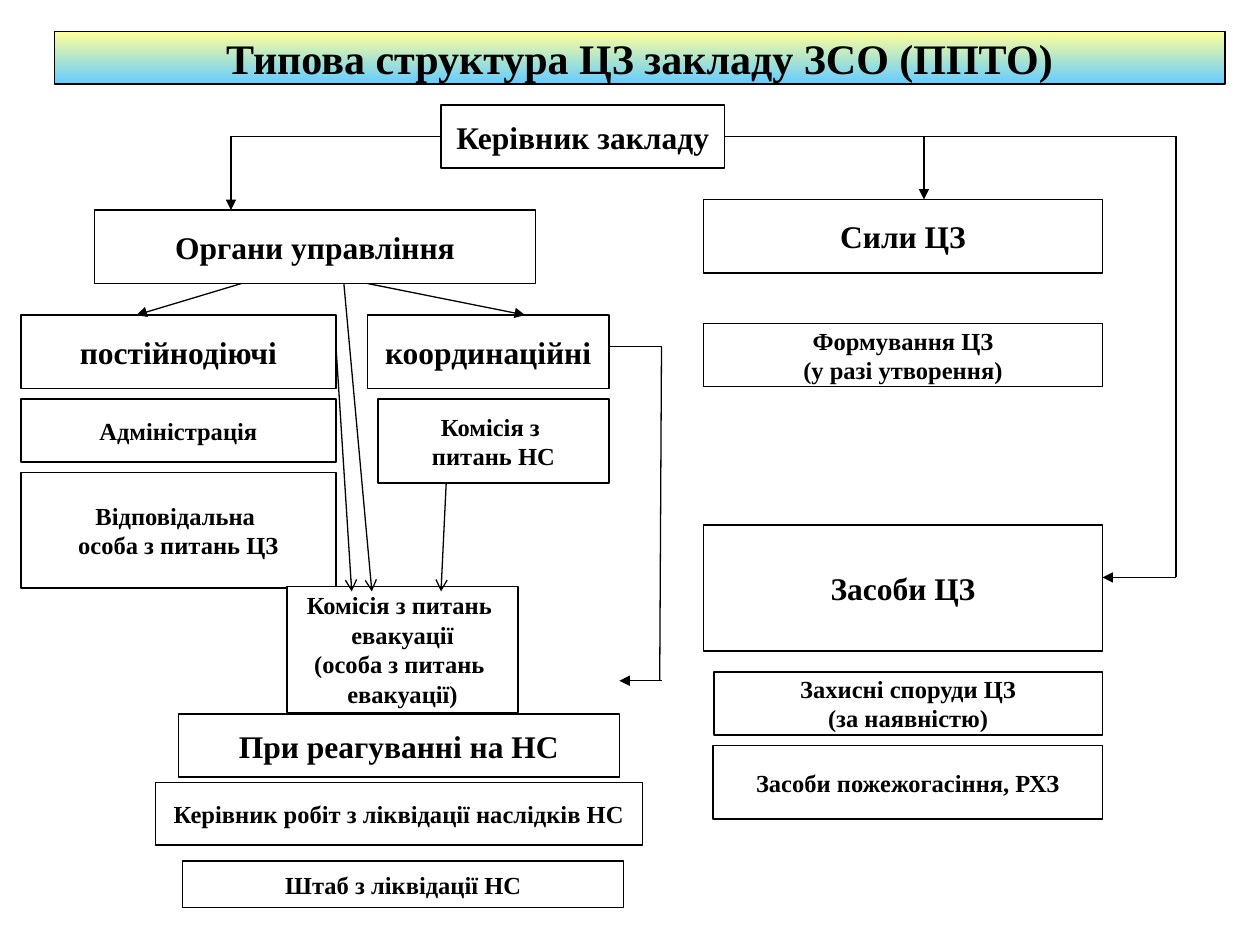
from typing import NamedTuple

from lxml import etree
from pptx import Presentation
from pptx.dml.color import RGBColor
from pptx.enum.shapes import MSO_CONNECTOR, MSO_SHAPE
from pptx.enum.text import MSO_ANCHOR, MSO_AUTO_SIZE, PP_ALIGN
from pptx.oxml.ns import qn
from pptx.util import Pt

RECTANGLE = MSO_SHAPE.RECTANGLE
STRAIGHT = MSO_CONNECTOR.STRAIGHT
MIDDLE = MSO_ANCHOR.MIDDLE
CENTER = PP_ALIGN.CENTER
NO_AUTOFIT = MSO_AUTO_SIZE.NONE

BLACK = RGBColor(0x00, 0x00, 0x00)
WHITE = RGBColor(0xFF, 0xFF, 0xFF)
YELLOW = RGBColor(0xFF, 0xFF, 0x99)
SKY_BLUE = RGBColor(0x66, 0xCC, 0xFF)

FONT = "Times New Roman"
TITLE_SIZE, UNIT_SIZE, DETAIL_SIZE = 24, 18, 14
LINE_WIDTH = 0.75


class Box(NamedTuple):
    left: float
    top: float
    width: float
    height: float
    lines: tuple[str, ...]
    size: int = DETAIL_SIZE


class Link(NamedTuple):
    start: tuple[float, float]
    end: tuple[float, float]
    head: str = ""


# Column edges and shared connector levels, in points
LEFT_COL, LEFT_WIDTH = 12, 180
RIGHT_COL, RIGHT_WIDTH = 402, 228
HEAD_LEVEL, MEANS_LEVEL, RESPONSE_LEVEL = 78, 330, 389
BODIES_X, FORCES_X, MEANS_X = 132, 528, 672
BODIES_BOTTOM, GROUPS_TOP, GROUPS_LEVEL = 162, 180, 198
EVACUATION_Y = 338

BOXES = (
    # Head and management bodies
    Box(252, 60, 162, 36, ("Керівник закладу",), UNIT_SIZE),
    Box(54, 120, 252, 42, ("Органи управління",), UNIT_SIZE),
    # Permanent bodies
    Box(LEFT_COL, GROUPS_TOP, LEFT_WIDTH, 42, ("постійнодіючі",), UNIT_SIZE),
    Box(LEFT_COL, 228, LEFT_WIDTH, 36, ("Адміністрація",)),
    Box(LEFT_COL, 270, LEFT_WIDTH, 66, ("Відповідальна ", "особа з питань ЦЗ")),
    # Coordinating bodies
    Box(210, GROUPS_TOP, 138, 42, ("координаційні",), UNIT_SIZE),
    Box(216, 228, 132, 48, ("Комісія з ", "питань НС")),
    Box(164, 335, 132, 72, ("Комісія з питань ", "евакуації",
                            "(особа з питань ", "евакуації)")),
    # Emergency response
    Box(102, 408, 252, 36, ("При реагуванні на НС",), UNIT_SIZE),
    Box(89, 447, 278, 36, ("Керівник робіт з ліквідації наслідків НС",)),
    Box(104.5, 492, 252, 26.5, ("Штаб з ліквідації НС",)),
    # Forces
    Box(RIGHT_COL, 114, RIGHT_WIDTH, 42, ("Сили ЦЗ",), UNIT_SIZE),
    Box(RIGHT_COL, 185, RIGHT_WIDTH, 36, ("Формування ЦЗ", "(у разі утворення)")),
    # Means
    Box(RIGHT_COL, 300, RIGHT_WIDTH, 72, ("Засоби ЦЗ",), UNIT_SIZE),
    Box(408, 384, 222, 36, ("Захисні споруди ЦЗ", "(за наявністю)")),
    Box(407.5, 426, 222.5, 42, ("Засоби пожежогасіння, РХЗ",)),
)

LINKS = (
    # Head to bodies, forces and means
    Link((252, HEAD_LEVEL), (BODIES_X, HEAD_LEVEL)),
    Link((414, HEAD_LEVEL), (MEANS_X, HEAD_LEVEL)),
    Link((BODIES_X, HEAD_LEVEL), (BODIES_X, 120), "triangle"),
    Link((FORCES_X, HEAD_LEVEL), (FORCES_X, 114), "triangle"),
    Link((MEANS_X, HEAD_LEVEL), (MEANS_X, MEANS_LEVEL)),
    Link((MEANS_X, MEANS_LEVEL), (630, MEANS_LEVEL), "triangle"),
    # Management bodies to their two groups
    Link((138, BODIES_BOTTOM), (78, GROUPS_TOP), "triangle"),
    Link((210, BODIES_BOTTOM), (300, GROUPS_TOP), "triangle"),
    # Coordinating bodies to emergency response
    Link((348, GROUPS_LEVEL), (378, GROUPS_LEVEL)),
    Link((378, GROUPS_LEVEL), (377, RESPONSE_LEVEL)),
    Link((378, RESPONSE_LEVEL), (354, RESPONSE_LEVEL), "triangle"),
    # Towards the evacuation commission
    Link((192, GROUPS_LEVEL), (201, EVACUATION_Y), "arrow"),
    Link((255, 276), (252, EVACUATION_Y), "arrow"),
    Link((196.5, BODIES_BOTTOM), (212.5, EVACUATION_Y), "arrow"),
)


def place_box(shape, box: Box) -> None:
    """Position, outline and label a shape."""
    shape.left, shape.top = Pt(box.left), Pt(box.top)
    shape.width, shape.height = Pt(box.width), Pt(box.height)
    shape.line.color.rgb = BLACK
    shape.line.width = Pt(LINE_WIDTH)
    frame = shape.text_frame
    frame.auto_size = NO_AUTOFIT
    frame.word_wrap = False
    frame.vertical_anchor = MIDDLE
    for index, line in enumerate(box.lines):
        paragraph = frame.add_paragraph() if index else frame.paragraphs[0]
        paragraph.alignment = CENTER
        run = paragraph.add_run()
        run.text = line
        run.font.name = FONT
        run.font.size = Pt(box.size)
        run.font.bold = True
        run.font.color.rgb = BLACK


def draw_title(slide) -> None:
    title = slide.shapes.title
    place_box(title, Box(31, 18, 669, 30,
                         ("Типова структура ЦЗ закладу ЗСО (ППТО)",), TITLE_SIZE))
    title.fill.gradient()
    title.fill.gradient_angle = 270
    for stop, color in zip(title.fill.gradient_stops, (YELLOW, SKY_BLUE)):
        stop.color.rgb = color


def draw_box(slide, box: Box) -> None:
    shape = slide.shapes.add_shape(RECTANGLE, 0, 0, 0, 0)
    shape.shadow.inherit = False
    shape.fill.solid()
    shape.fill.fore_color.rgb = WHITE
    place_box(shape, box)


def draw_link(slide, link: Link) -> None:
    points = [Pt(value) for value in link.start + link.end]
    connector = slide.shapes.add_connector(STRAIGHT, *points)
    connector.line.color.rgb = BLACK
    connector.line.width = Pt(LINE_WIDTH)
    if link.head:
        outline = connector.line._get_or_add_ln()
        etree.SubElement(outline, qn("a:tailEnd"), type=link.head)
    etree.SubElement(connector._element.spPr, qn("a:effectLst"))


def main() -> None:
    presentation = Presentation()
    presentation.slide_width, presentation.slide_height = Pt(720), Pt(540)
    title_only = presentation.slide_layouts[5]
    slide = presentation.slides.add_slide(title_only)
    draw_title(slide)
    for box in BOXES:
        draw_box(slide, box)
    for link in LINKS:
        draw_link(slide, link)
    presentation.save("out.pptx")


if __name__ == "__main__":
    main()
